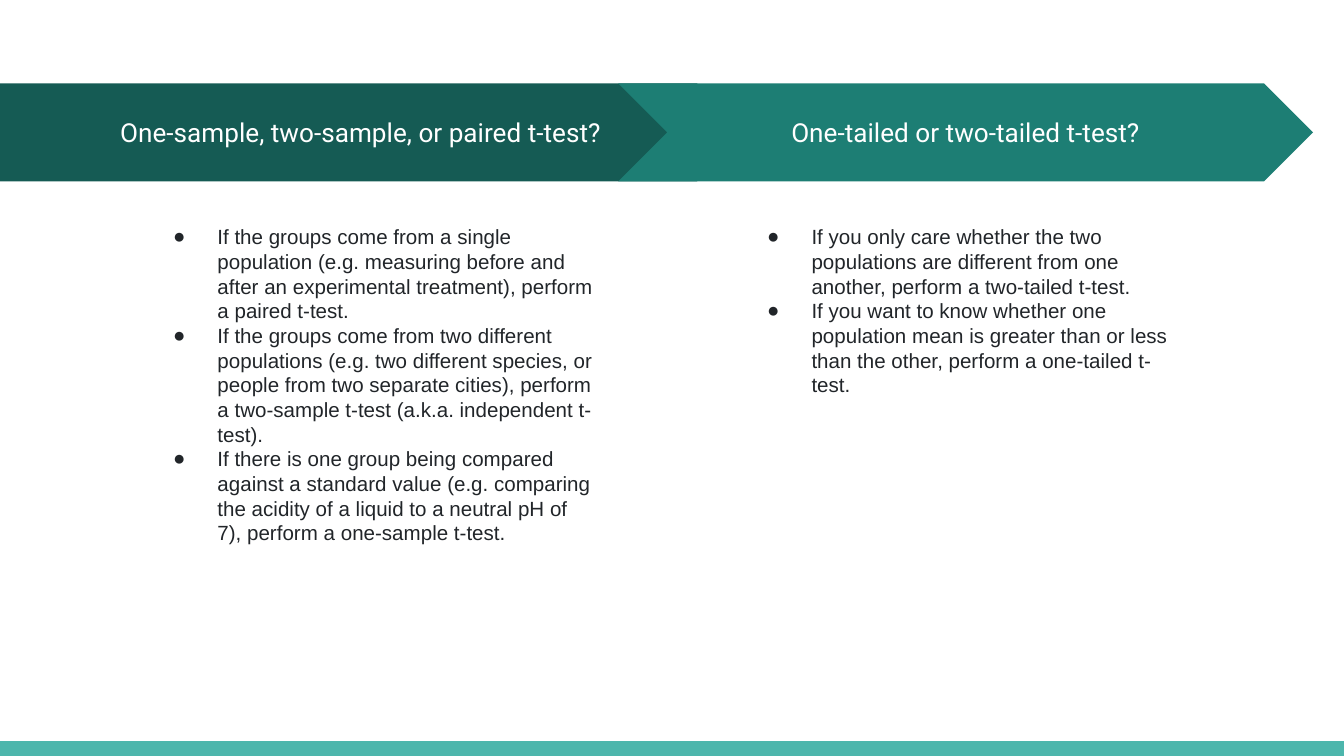
"""Build a slide on choosing a t-test: two arrow headings with bullets below."""
import lxml.etree
import pptx
import pptx.dml.color
import pptx.enum.shapes
import pptx.enum.text
import pptx.oxml.ns
import pptx.util

WIDTH = 10
HEIGHT = WIDTH * 9 / 16
BANNER_TOP, BANNER_H = 0.62, 0.73
BODY_TOP, BODY_W, BODY_H = 1.57, 3.5, 2.86
BODY_LEFT, COLUMN_STEP = 1.02, 4.42
FOOTER_H = 0.11
INK, WHITE, FOOTER = "212529", "FFFFFF", "4DB6AC"
SHAPES = pptx.enum.shapes.MSO_SHAPE

COLUMNS = [
    dict(title="One-sample, two-sample, or paired t-test?",
         shape=SHAPES.PENTAGON, left=0, width=5.55, fill="155B54",
         bullets=[
             "If the groups come from a single population (e.g. measuring before and after an experimental treatment), perform a paired t-test.",
             "If the groups come from two different populations (e.g. two different species, or people from two separate cities), perform a two-sample t-test (a.k.a. independent t-test).",
             "If there is one group being compared against a standard value (e.g. comparing the acidity of a liquid to a neutral pH of 7), perform a one-sample t-test.",
         ]),
    dict(title="One-tailed or two-tailed t-test?",
         shape=SHAPES.CHEVRON, left=4.6, width=5.17, fill="1D7E74",
         bullets=[
             "If you only care whether the two populations are different from one another, perform a two-tailed t-test.",
             "If you want to know whether one population mean is greater than or less than the other, perform a one-tailed t-test.",
         ]),
]


def rgb(color):
    """Turn a hex string into a colour."""
    return pptx.dml.color.RGBColor.from_string(color)


def inches(*values):
    """Turn numbers into inch lengths."""
    return [pptx.util.Inches(v) for v in values]


def add_filled(s, kind, box, color):
    """Add a flat shape without outline or shadow."""
    sp = s.shapes.add_shape(kind, *inches(*box))
    sp.shadow.inherit = False
    sp.fill.solid()
    sp.fill.fore_color.rgb = rgb(color)
    sp.line.fill.background()
    return sp


def prepare(sp):
    """Set wrapping and equal insets, and return the text frame."""
    tf = sp.text_frame
    tf.word_wrap = True
    tf.margin_left = tf.margin_top = tf.margin_right = tf.margin_bottom = pptx.util.Inches(0.1)
    return tf


def add_run(p, text, font, size, color):
    """Append a formatted run to a paragraph."""
    r = p.add_run()
    r.text = text
    r.font.name = font
    r.font.size = pptx.util.Pt(size)
    r.font.color.rgb = rgb(color)


def set_bullet(p):
    """Give a paragraph a hanging round bullet."""
    qn = pptx.oxml.ns.qn
    pPr = p._p.get_or_add_pPr()
    pPr.set("marL", str(pptx.util.Inches(0.5)))
    pPr.set("indent", str(pptx.util.Inches(-0.33)))
    clr = lxml.etree.SubElement(pPr, qn("a:buClr"))
    lxml.etree.SubElement(clr, qn("a:srgbClr"), val=INK)
    lxml.etree.SubElement(pPr, qn("a:buFont"), typeface="Arial")
    lxml.etree.SubElement(pPr, qn("a:buChar"), char="●")


def add_banner(s, col):
    """Draw the arrow heading of a column."""
    box = (col["left"], BANNER_TOP, col["width"], BANNER_H)
    sp = add_filled(s, col["shape"], box, col["fill"])
    sp.adjustments[0] = 0.5
    tf = prepare(sp)
    tf.vertical_anchor = pptx.enum.text.MSO_ANCHOR.MIDDLE
    p = tf.paragraphs[0]
    p.alignment = pptx.enum.text.PP_ALIGN.CENTER
    add_run(p, col["title"], "Roboto", 14, WHITE)


def add_bullets(s, left, bullets):
    """Write the bullet list of a column."""
    tf = prepare(s.shapes.add_textbox(*inches(left, BODY_TOP, BODY_W, BODY_H)))
    for i, text in enumerate(bullets):
        p = tf.add_paragraph() if i else tf.paragraphs[0]
        set_bullet(p)
        add_run(p, text, "Arial", 11, INK)


def main():
    """Build and save the slide."""
    prs = pptx.Presentation()
    prs.slide_width, prs.slide_height = inches(WIDTH, HEIGHT)
    s = prs.slides.add_slide(prs.slide_layouts[6])
    add_filled(s, SHAPES.RECTANGLE, (0, HEIGHT - FOOTER_H, WIDTH, FOOTER_H), FOOTER)
    for i, col in enumerate(COLUMNS):
        add_banner(s, col)
        add_bullets(s, BODY_LEFT + i * COLUMN_STEP, col["bullets"])
    prs.save("out.pptx")


if __name__ == "__main__":
    main()
